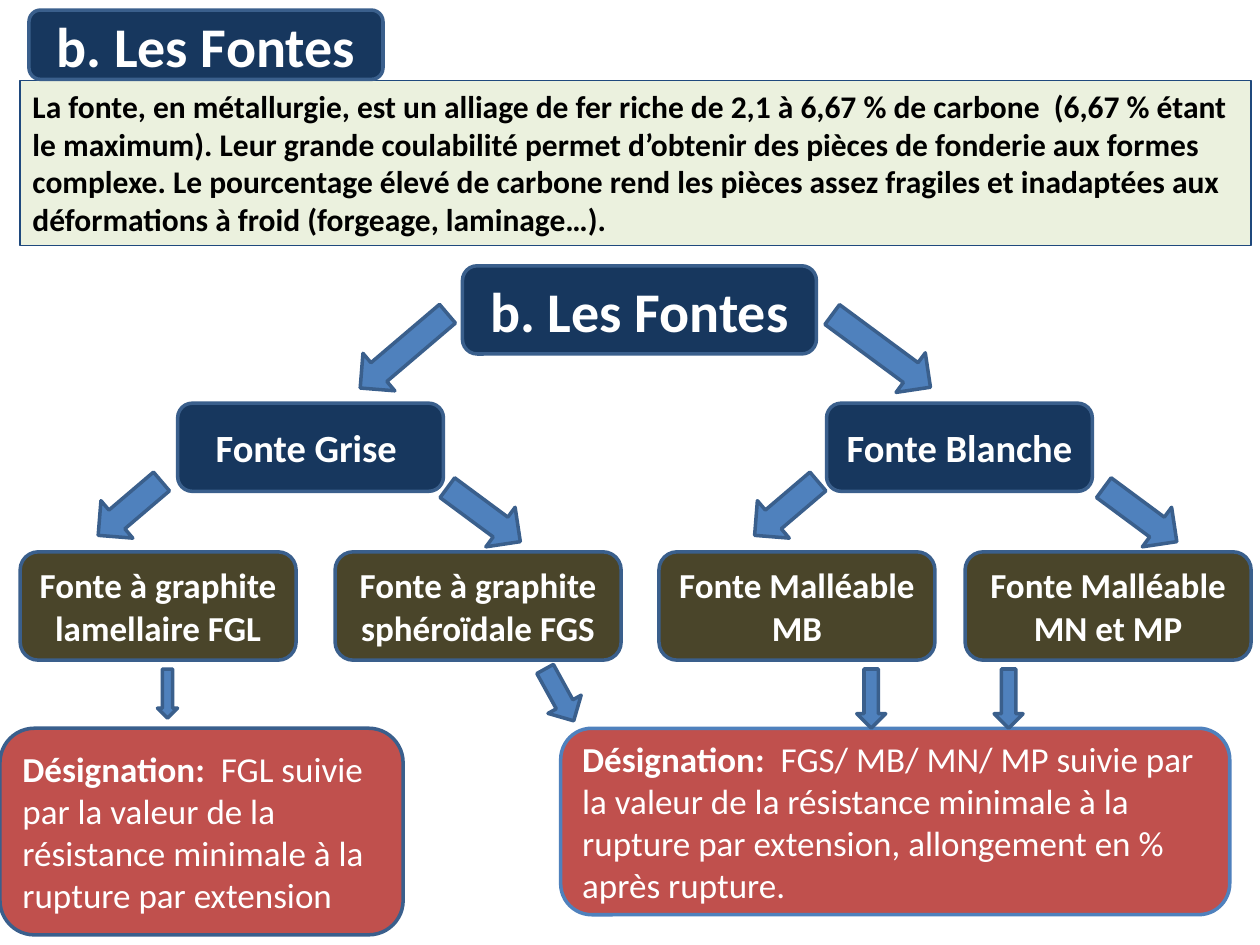
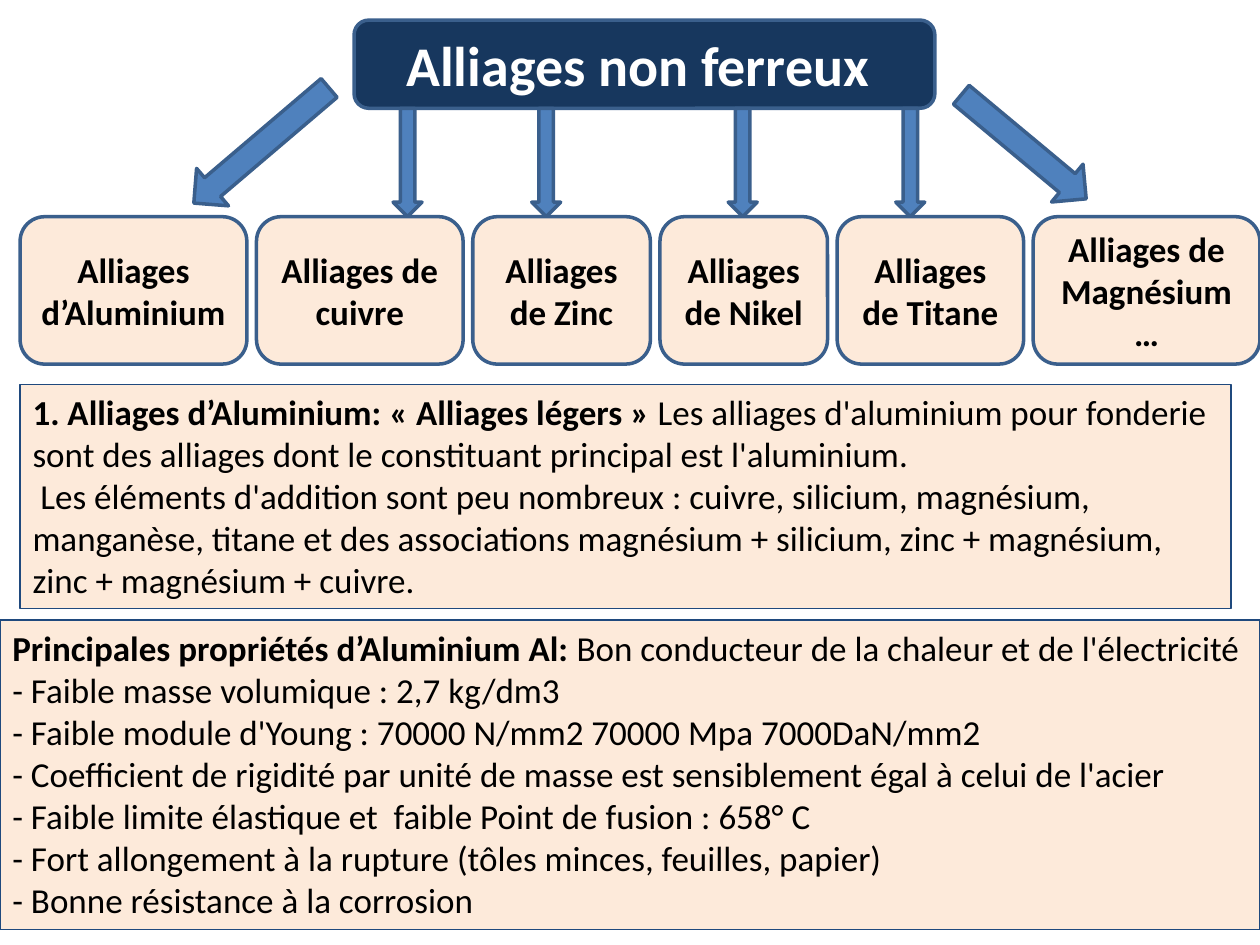
"""Build two slides on cast irons and non-ferrous alloys."""
from pptx import Presentation
from pptx.dml.color import RGBColor
from pptx.enum.shapes import MSO_SHAPE
from pptx.enum.text import MSO_ANCHOR, MSO_AUTO_SIZE, PP_ALIGN
from pptx.util import Inches, Pt

ROUNDED = MSO_SHAPE.FLOWCHART_ALTERNATE_PROCESS
RECTANGLE = MSO_SHAPE.RECTANGLE
RIGHT_ARROW = MSO_SHAPE.RIGHT_ARROW
DOWN_ARROW = MSO_SHAPE.DOWN_ARROW
LEFT, CENTER = PP_ALIGN.LEFT, PP_ALIGN.CENTER
TOP, MIDDLE = MSO_ANCHOR.TOP, MSO_ANCHOR.MIDDLE
FIT_TEXT = MSO_AUTO_SIZE.SHAPE_TO_FIT_TEXT

NAVY = RGBColor(0x17, 0x37, 0x5E)
OUTLINE = RGBColor(0x3A, 0x5F, 0x8C)
BLUE = RGBColor(0x4F, 0x81, 0xBD)
FRAME = RGBColor(0x1F, 0x49, 0x7D)
OLIVE = RGBColor(0x4A, 0x45, 0x2A)
RED = RGBColor(0xC0, 0x50, 0x4D)
PALE_GREEN = RGBColor(0xEB, 0xF1, 0xDE)
PALE_ORANGE = RGBColor(0xFD, 0xEA, 0xDA)
WHITE = RGBColor(0xFF, 0xFF, 0xFF)
BLACK = RGBColor(0x00, 0x00, 0x00)

FONT = "Calibri"
SLIDE_WIDTH, SLIDE_HEIGHT = 10, 7.5
MARGIN = 0.16
TITLE_WIDTH, TITLE_HEIGHT = 2.81, 0.7
ARROW_HEIGHT = 0.39
DOWN_LEFT, DOWN_RIGHT = 139.6, 36.5

IRON_TITLE = "b. Les Fontes"
IRON_DEFINITION = (
    "La fonte, en métallurgie, est un alliage de fer riche de 2,1 à 6,67 % de carbone  "
    "(6,67 % étant le maximum). Leur grande coulabilité permet d’obtenir des pièces de "
    "fonderie aux formes complexe. Le pourcentage élevé de carbone rend les pièces assez "
    "fragiles et inadaptées aux déformations à froid (forgeage, laminage…)."
)
IRON_FAMILIES = [
    {"name": "Fonte Grise ", "left": 1.41, "arrows": (0.7, 3.48),
     "types": [(0.16, ["Fonte à graphite lamellaire FGL"]),
               (2.66, ["Fonte à graphite sphéroïdale FGS"])]},
    {"name": "Fonte Blanche", "left": 6.56, "arrows": (5.91, 8.69),
     "types": [(5.23, ["Fonte Malléable", "MB"]),
               (7.66, ["Fonte Malléable MN et MP"])]},
]
TYPE_WIDTHS = (2.19, 2.27)
DESIGNATIONS = [
    ("FGL suivie par la valeur de la résistance minimale à la rupture par extension",
     0, 3.2, 1.64, OUTLINE),
    ("FGS/ MB/ MN/ MP suivie par la valeur de la résistance minimale à la rupture par "
     "extension, allongement en % après rupture.",
     4.45, 5.31, 1.48, BLUE),
]
DESIGNATION_ARROWS = [
    (1.25, 5.31, 0.16, 0.39, 0),
    (4.29, 5.28, 0.3, 0.47, 331.2),
    (6.8, 5.31, 0.23, 0.47, 0),
    (7.89, 5.31, 0.23, 0.47, 0),
]

ALLOY_TITLE = "Alliages non ferreux "
ALLOYS = [
    ("Alliages d’Aluminium", 1.8),
    ("Alliages de cuivre", 1.64),
    ("Alliages de Zinc", 1.41),
    ("Alliages de Nikel", 1.33),
    ("Alliages de Titane", 1.48),
    ("Alliages de Magnésium …", 1.8),
]
ALLOY_TOP, ALLOY_HEIGHT = 1.72, 1.17
ALLOY_ARROW_LEFTS = (3.12, 4.22, 5.78, 7.11)
ALUMINIUM_PANELS = [
    ((MARGIN, 3.05, 9.61, 1.78), "1. Alliages d’Aluminium: « Alliages légers » ", [
        "Les alliages d'aluminium pour fonderie sont des alliages dont le constituant "
        "principal est l'aluminium.",
        " Les éléments d'addition sont peu nombreux : cuivre, silicium, magnésium, "
        "manganèse, titane et des associations magnésium + silicium, zinc + magnésium, "
        "zinc + magnésium + cuivre.",
    ]),
    ((0, 4.92, SLIDE_WIDTH, 2.46), "Principales propriétés d’Aluminium Al: ", [
        "Bon conducteur de la chaleur et de l'électricité",
        "- Faible masse volumique : 2,7 kg/dm3",
        "- Faible module d'Young : 70000 N/mm2 70000 Mpa 7000DaN/mm2",
        "- Coefficient de rigidité par unité de masse est sensiblement égal à celui de l'acier",
        "- Faible limite élastique et  faible Point de fusion : 658° C",
        "- Fort allongement à la rupture (tôles minces, feuilles, papier)",
        "- Bonne résistance à la corrosion",
    ]),
]


def add_block(slide, kind, box, fill, line=OUTLINE, line_width=2):
    """Add a filled and outlined shape at a box given in inches."""
    shape = slide.shapes.add_shape(kind, *(Inches(length) for length in box))
    shape.shadow.inherit = False
    shape.fill.solid()
    shape.fill.fore_color.rgb = fill
    shape.line.color.rgb = line
    shape.line.width = Pt(line_width)
    return shape


def add_arrow(slide, kind, box, rotation=0):
    """Add a blue block arrow."""
    add_block(slide, kind, box, BLUE).rotation = rotation


def write(shape, lines, size, color, align=CENTER, anchor=MIDDLE, lead="", bold=True):
    """Write one paragraph a line, the first one opened by a bold lead."""
    frame = shape.text_frame
    frame.word_wrap = True
    frame.vertical_anchor = anchor
    for index, line in enumerate(lines):
        paragraph = frame.paragraphs[0] if index == 0 else frame.add_paragraph()
        paragraph.alignment = align
        paragraph.font.name = FONT
        paragraph.font.size = Pt(size)
        paragraph.font.color.rgb = color
        paragraph.font.bold = bold
        if lead and index == 0:
            lead_run = paragraph.add_run()
            lead_run.text = lead
            lead_run.font.bold = True
        paragraph.add_run().text = line


def add_label(slide, box, lines, fill, size=20, color=WHITE):
    """Add a rounded box with centred bold text."""
    write(add_block(slide, ROUNDED, box, fill), lines, size, color)


def add_panel(slide, box, lines, fill, size, lead="", bold=True):
    """Add a thinly framed rectangle of running text."""
    panel = add_block(slide, RECTANGLE, box, fill, FRAME, 0.75)
    write(panel, lines, size, BLACK, LEFT, TOP, lead, bold)
    panel.text_frame.auto_size = FIT_TEXT


def build_iron_slide(slide):
    """Draw the tree of cast irons and their designations."""
    add_panel(slide, (MARGIN, 0.64, 9.77, 1.31), [IRON_DEFINITION], PALE_GREEN, 18)
    for left, top, height in ((0.23, 0.08, 0.55), (3.67, 2.11, TITLE_HEIGHT)):
        add_label(slide, (left, top, TITLE_WIDTH, height), [IRON_TITLE], NAVY, 32)
    add_arrow(slide, RIGHT_ARROW, (2.75, 2.59, 0.91, ARROW_HEIGHT), DOWN_LEFT)
    add_arrow(slide, RIGHT_ARROW, (6.51, 2.59, 0.97, ARROW_HEIGHT), DOWN_RIGHT)

    for family in IRON_FAMILIES:
        box = (family["left"], 3.2, 2.11, TITLE_HEIGHT)
        add_label(slide, box, [family["name"]], NAVY, 22)
        for (left, lines), width in zip(family["types"], TYPE_WIDTHS):
            add_label(slide, (left, 4.38, width, 0.86), lines, OLIVE)
        first, second = family["arrows"]
        add_arrow(slide, RIGHT_ARROW, (first, 3.84, 0.66, ARROW_HEIGHT), DOWN_LEFT)
        add_arrow(slide, RIGHT_ARROW, (second, 3.89, 0.72, ARROW_HEIGHT), DOWN_RIGHT)

    for text, left, width, height, line in DESIGNATIONS:
        shape = add_block(slide, ROUNDED, (left, 5.78, width, height), RED, line)
        write(shape, [text], 20, WHITE, LEFT, lead="Désignation:  ", bold=False)
    for *box, rotation in DESIGNATION_ARROWS:
        add_arrow(slide, DOWN_ARROW, box, rotation)


def build_alloy_slide(slide):
    """Draw the row of non-ferrous alloys and the aluminium panels."""
    title_bottom = MARGIN + TITLE_HEIGHT
    add_label(slide, (2.81, MARGIN, 4.61, TITLE_HEIGHT), [ALLOY_TITLE], NAVY, 32)
    total_width = sum(width for _, width in ALLOYS)
    gap = (SLIDE_WIDTH - MARGIN - total_width) / (len(ALLOYS) - 1)
    left = MARGIN
    for name, width in ALLOYS:
        box = (left, ALLOY_TOP, width, ALLOY_HEIGHT)
        add_label(slide, box, [name], PALE_ORANGE, color=BLACK)
        left += width + gap

    add_arrow(slide, RIGHT_ARROW, (1.37, 0.96, 1.41, ARROW_HEIGHT), DOWN_LEFT)
    add_arrow(slide, RIGHT_ARROW, (7.48, 0.97, 1.29, ARROW_HEIGHT), 39.8)
    for arrow_left in ALLOY_ARROW_LEFTS:
        box = (arrow_left, title_bottom, 0.23, ALLOY_TOP - title_bottom)
        add_arrow(slide, DOWN_ARROW, box)
    for box, lead, lines in ALUMINIUM_PANELS:
        add_panel(slide, box, lines, PALE_ORANGE, 20, lead, bold=False)


def main():
    """Build and save the presentation."""
    presentation = Presentation()
    presentation.slide_width = Inches(SLIDE_WIDTH)
    presentation.slide_height = Inches(SLIDE_HEIGHT)
    blank = presentation.slide_layouts[6]
    for build in (build_iron_slide, build_alloy_slide):
        build(presentation.slides.add_slide(blank))
    presentation.save("out.pptx")


if __name__ == "__main__":
    main()
